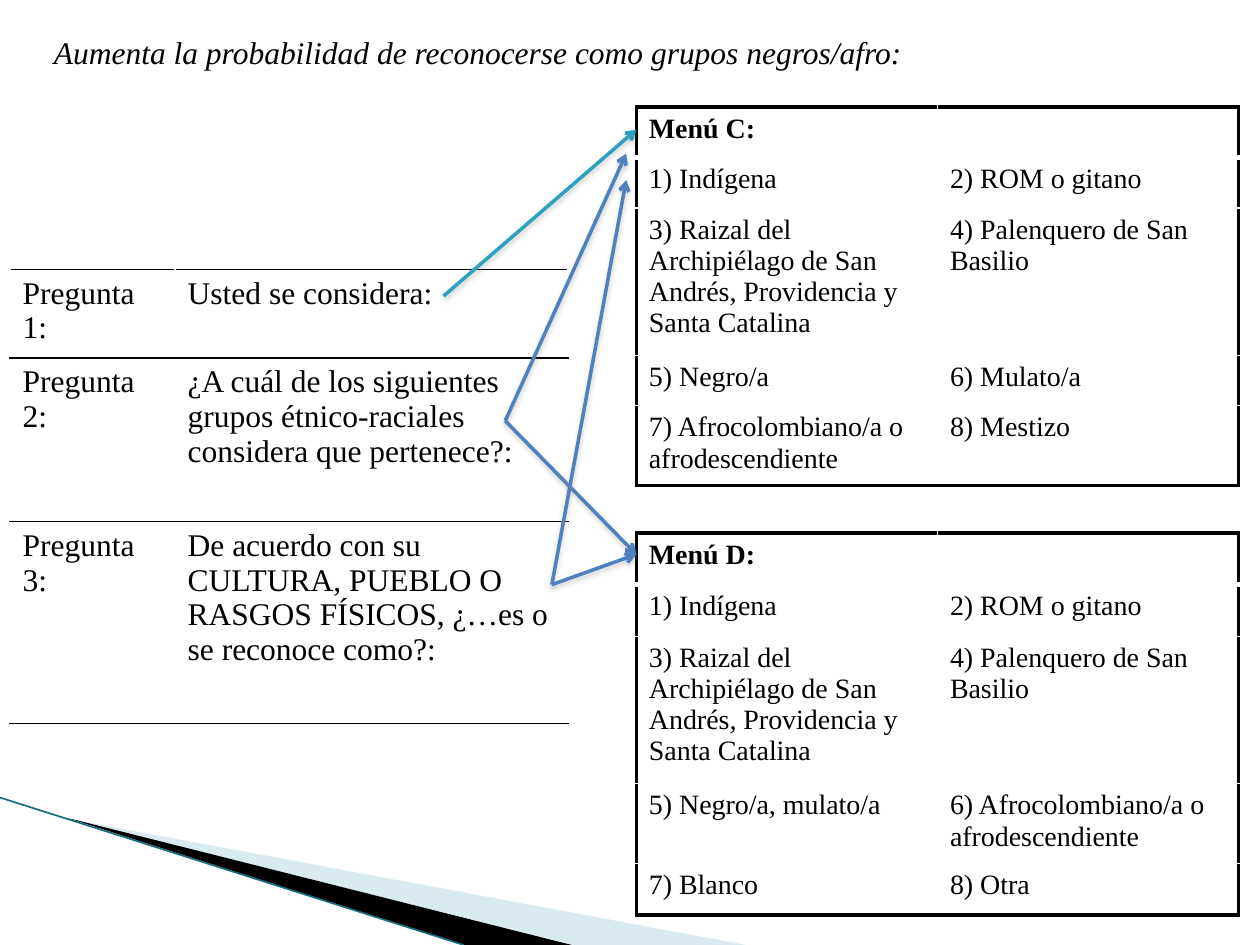
from typing import NamedTuple

from lxml import etree
from pptx import Presentation
from pptx.dml.color import RGBColor
from pptx.enum.shapes import MSO_CONNECTOR
from pptx.oxml.ns import qn
from pptx.util import Emu, Pt

PX = 9144  # one px is a hundredth of an inch
STRAIGHT = MSO_CONNECTOR.STRAIGHT
FONT = "Times New Roman"

BLACK = RGBColor(0x00, 0x00, 0x00)
WHITE = RGBColor(0xFF, 0xFF, 0xFF)
GRAY = RGBColor(0x80, 0x80, 0x80)
PALE_BLUE = RGBColor(0xA0, 0xCB, 0xDC)
DARK_TEAL = RGBColor(0x1B, 0x6E, 0x82)
TEAL = RGBColor(0x2D, 0xA2, 0xBF)
BLUE = RGBColor(0x4F, 0x81, 0xBD)


class Border(NamedTuple):
    color: RGBColor
    width: float


class Grid(NamedTuple):
    left: int
    top: int
    columns: list[int]
    rows: list[int]
    cells: list[list[str]]
    size: int


class Arrow(NamedTuple):
    start: tuple[int, int]
    end: tuple[int, int]
    color: RGBColor


THIN_WHITE = Border(WHITE, 1)
THICK_WHITE = Border(WHITE, 3)
THIN_BLACK = Border(BLACK, 1)
FRAME = Border(BLACK, 2.25)

RAIZAL = "3) Raizal del Archipiélago de San Andrés, Providencia y Santa Catalina"
FIRST_OPTIONS = [["1) Indígena", "2) ROM o gitano"],
                 [RAIZAL, "4) Palenquero de San Basilio"]]

MENUS = [
    Grid(505, 85, [239, 239], [40, 40, 117, 40, 63],
         [["Menú C:", ""], *FIRST_OPTIONS,
          ["5) Negro/a", "6) Mulato/a"],
          ["7) Afrocolombiano/a o afrodescendiente", "8) Mestizo"]], 16),
    Grid(505, 423, [239, 239], [41, 41, 117, 63, 41],
         [["Menú D:", ""], *FIRST_OPTIONS,
          ["5) Negro/a, mulato/a", "6) Afrocolombiano/a o afrodescendiente"],
          ["7) Blanco", "8) Otra"]], 16),
]
QUESTIONS = Grid(
    8, 214, [131, 312], [70, 130, 160],
    [["Pregunta 1:", "Usted se considera:"],
     ["Pregunta 2:", "¿A cuál de los siguientes grupos étnico-raciales "
                     "considera que pertenece?:"],
     ["Pregunta 3:", "De acuerdo con su CULTURA, PUEBLO O RASGOS FÍSICOS, "
                     "¿…es o se reconoce como?:"]], 18)

QUESTION_2, QUESTION_3, MENU_D = (401, 334), (438, 464), (505, 440)
ARROWS = [
    Arrow((352, 235), (505, 103), TEAL),
    Arrow(QUESTION_2, (497, 122), BLUE),
    Arrow(QUESTION_2, MENU_D, BLUE),
    Arrow(QUESTION_3, (497, 143), BLUE),
    Arrow(QUESTION_3, MENU_D, BLUE),
]


def px(value: int) -> Emu:
    return Emu(value * PX)


def add_color(parent, color: RGBColor, opacity: int = 100) -> None:
    element = etree.SubElement(parent, qn("a:srgbClr"), val=str(color))
    if opacity < 100:
        etree.SubElement(element, qn("a:alpha"), val=str(opacity * 1000))


def write_text(frame, text: str, *, size: int, bold: bool = False,
               italic: bool = False) -> None:
    frame.word_wrap = True
    run = frame.paragraphs[0].add_run()
    run.text = text
    font = run.font
    font.name, font.size = FONT, Pt(size)
    font.bold, font.italic = bold, italic
    font.color.rgb = BLACK


def set_borders(cell, left: Border, right: Border, top: Border, bottom: Border) -> None:
    properties = cell._tc.get_or_add_tcPr()
    sides = zip(("a:lnL", "a:lnR", "a:lnT", "a:lnB"), (left, right, top, bottom))
    for position, (tag, border) in enumerate(sides):
        line = etree.Element(qn(tag), w=str(Pt(border.width)))
        add_color(etree.SubElement(line, qn("a:solidFill")), border.color)
        properties.insert(position, line)


def add_grid(slide, grid: Grid):
    frame = slide.shapes.add_table(
        len(grid.rows), len(grid.columns), px(grid.left), px(grid.top),
        px(sum(grid.columns)), px(sum(grid.rows)))
    table = frame.table
    table.first_row = table.horz_banding = False
    for column, width in zip(table.columns, grid.columns):
        column.width = px(width)
    for row, height in zip(table.rows, grid.rows):
        row.height = px(height)
    for row_index, texts in enumerate(grid.cells):
        for column_index, text in enumerate(texts):
            cell = table.cell(row_index, column_index)
            cell.fill.background()
            if text:
                write_text(cell.text_frame, text, size=grid.size,
                           bold=text.startswith("Menú"))
            else:
                cell.margin_top = cell.margin_bottom = 0
    return table


def add_menu(slide, grid: Grid) -> None:
    table = add_grid(slide, grid)
    last = len(grid.rows) - 1
    # Horizontal rules from top to bottom, the second one under the heading
    rules = [FRAME, THICK_WHITE] + [THIN_WHITE] * (last - 1) + [FRAME]
    for row in range(last + 1):
        set_borders(table.cell(row, 0), FRAME, THIN_WHITE, rules[row], rules[row + 1])
        set_borders(table.cell(row, 1), THIN_WHITE, FRAME, rules[row], rules[row + 1])


def add_questions(slide, grid: Grid) -> None:
    for cell in add_grid(slide, grid).iter_cells():
        set_borders(cell, THIN_WHITE, THIN_WHITE, THIN_BLACK, THIN_BLACK)


def add_line(slide, start: tuple[int, int], end: tuple[int, int],
             color: RGBColor, width: float):
    connector = slide.shapes.add_connector(STRAIGHT, *map(px, start + end))
    connector.line.color.rgb = color
    connector.line.width = Pt(width)
    effects = etree.SubElement(connector._element.spPr, qn("a:effectLst"))
    return connector, effects


def add_arrow(slide, arrow: Arrow) -> None:
    connector, effects = add_line(slide, arrow.start, arrow.end, arrow.color, 2)
    etree.SubElement(connector.line._get_or_add_ln(), qn("a:tailEnd"), type="arrow")
    shadow = etree.SubElement(effects, qn("a:outerShdw"), blurRad=str(Pt(3.1)),
                              dist=str(Pt(1.6)), dir="5400000", rotWithShape="0")
    add_color(shadow, GRAY, 38)


def add_wedge(slide, points: list[tuple[int, int]], color: RGBColor,
              opacity: int = 100) -> None:
    builder = slide.shapes.build_freeform(*points[0], scale=PX)
    builder.add_line_segments(points[1:], close=True)
    shape = builder.convert_to_shape()
    shape.shadow.inherit = False
    shape.fill.solid()
    shape.fill.fore_color.rgb = color
    shape.line.fill.background()
    if opacity < 100:
        fill_color = shape._element.spPr.find(".//" + qn("a:srgbClr"))
        etree.SubElement(fill_color, qn("a:alpha"), val=str(opacity * 1000))


def main() -> None:
    presentation = Presentation()
    presentation.slide_width, presentation.slide_height = px(1000), px(750)
    slide = presentation.slides.add_slide(presentation.slide_layouts[6])

    # Corner decoration
    add_wedge(slide, [(55, 650), (592, 750), (456, 750)], PALE_BLUE, 40)
    add_wedge(slide, [(53, 649), (454, 750), (368, 750)], BLACK)
    add_line(slide, (0, 633), (368, 750), DARK_TEAL, 0.95)

    # Title
    title = slide.shapes.add_textbox(px(33), px(21), px(738), px(71))
    write_text(title.text_frame, "Aumenta la probabilidad de reconocerse como "
               "grupos negros/afro:", size=18, italic=True)

    # Menus, questions and the arrows between them
    for menu in MENUS:
        add_menu(slide, menu)
    add_questions(slide, QUESTIONS)
    for arrow in ARROWS:
        add_arrow(slide, arrow)

    presentation.save("out.pptx")


if __name__ == "__main__":
    main()
